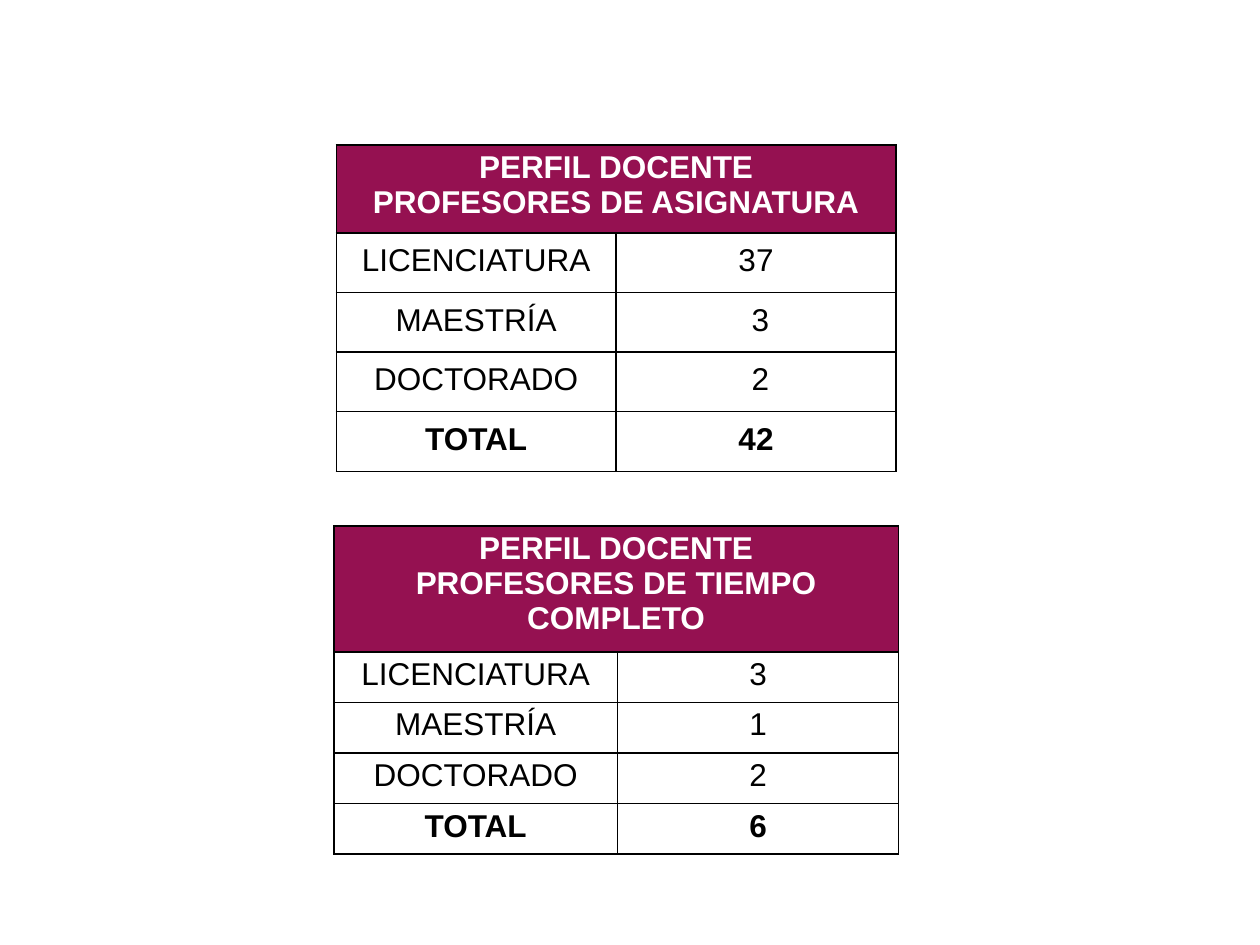
from lxml.etree import SubElement
from pptx import Presentation
from pptx.dml.color import RGBColor
from pptx.enum.text import PP_ALIGN as Align
from pptx.oxml.ns import qn
from pptx.util import Cm, Pt


def color(hex_string):
    return RGBColor.from_string(hex_string)


class ProfileSlide:
    font = "Arial"
    size = Pt(18)
    banner = "951151"
    banner_text = "FFFFFF"
    ink = "000000"
    border = Pt(1)

    def __init__(self, deck):
        self.slide = deck.slides.add_slide(deck.slide_layouts[6])

    def table(self, left, top, widths, heights, heading, rows,
              inset, heading_margin=0, digit_indent=0):
        """Draw a merged heading above label and count rows; the last row is bold."""
        frame = self.slide.shapes.add_table(
            len(heights), len(widths), Cm(left), Cm(top),
            Cm(sum(widths)), Cm(sum(heights)))
        grid = frame.table
        grid.first_row = grid.horz_banding = False
        for column, width in zip(grid.columns, widths):
            column.width = Cm(width)
        for row, height in zip(grid.rows, heights):
            row.height = Cm(height)
        grid.cell(0, 0).merge(grid.cell(0, len(widths) - 1))
        for cell in grid.iter_cells():
            self.outline(cell)
            cell.fill.background()

        title = grid.cell(0, 0)
        title.fill.solid()
        title.fill.fore_color.rgb = color(self.banner)
        self.label(title, heading, 0.1, self.banner_text, True,
                   heading_margin, heading_margin)

        for number, (level, count) in enumerate(rows, start=1):
            bold = number == len(rows)
            self.label(grid.cell(number, 0), level, inset, self.ink, bold)
            indent = digit_indent if len(count) == 1 else 0
            self.label(grid.cell(number, 1), count, inset, self.ink, bold, indent)

    def outline(self, cell):
        properties = cell._tc.get_or_add_tcPr()
        for side in ("a:lnL", "a:lnR", "a:lnT", "a:lnB"):
            line = SubElement(properties, qn(side), w=str(self.border))
            fill = SubElement(line, qn("a:solidFill"))
            SubElement(fill, qn("a:srgbClr"), val=self.ink)

    def label(self, cell, text, inset, ink, bold, left=0, right=0):
        cell.margin_left = cell.margin_right = cell.margin_bottom = 0
        cell.margin_top = Cm(inset)
        cell.text_frame.text = text
        for paragraph in cell.text_frame.paragraphs:
            properties = paragraph._p.get_or_add_pPr()
            properties.set("marL", str(Cm(left)))
            properties.set("marR", str(Cm(right)))
            paragraph.alignment = Align.CENTER
            paragraph.font.name = self.font
            paragraph.font.size = self.size
            paragraph.font.bold = bold
            paragraph.font.color.rgb = color(ink)


def main():
    deck = Presentation()
    deck.slide_width, deck.slide_height = Cm(25.4), Cm(19.05)
    profile = ProfileSlide(deck)
    levels = ("LICENCIATURA", "MAESTRÍA", "DOCTORADO", "TOTAL")

    profile.table(
        6.78, 2.92, (5.64, 5.64), [1.78] + [1.2] * 4,
        "PERFIL DOCENTE\nPROFESORES DE ASIGNATURA",
        list(zip(levels, ("37", "3", "2", "42"))),
        inset=0.2, digit_indent=0.18)
    profile.table(
        6.73, 10.6, (5.72, 5.66), [2.54] + [1.02] * 4,
        "PERFIL DOCENTE PROFESORES DE TIEMPO COMPLETO",
        list(zip(levels, ("3", "1", "2", "6"))),
        inset=0.1, heading_margin=1.6)

    deck.save("out.pptx")


if __name__ == "__main__":
    main()
